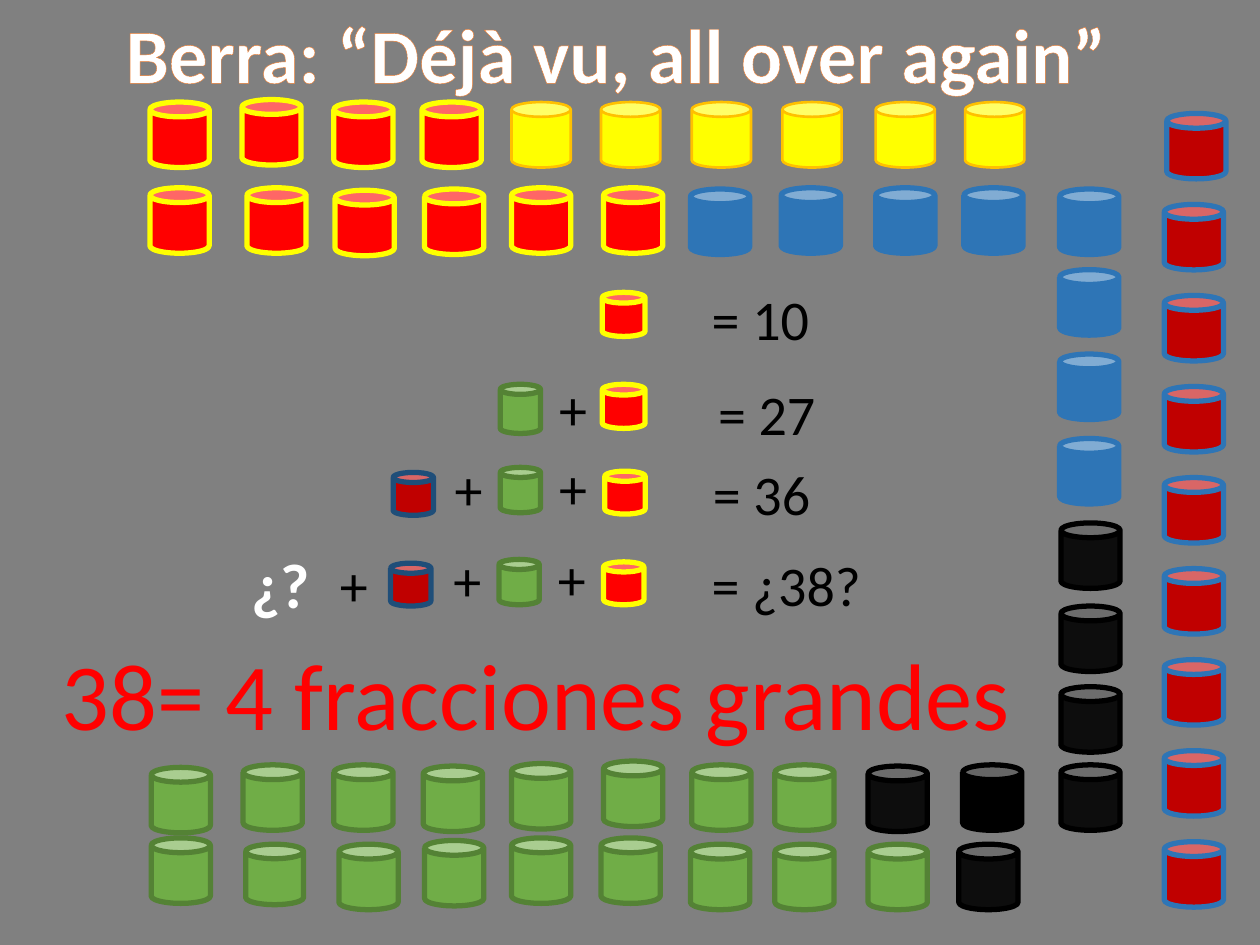
import pptx
import pptx.util
import pptx.dml.color
import pptx.enum.shapes
import pptx.enum.text
import pptx.oxml
import pptx.oxml.ns

Inches = pptx.util.Inches
Pt = pptx.util.Pt
RGB = pptx.dml.color.RGBColor

GRAY = RGB(0x80, 0x80, 0x80)
WHITE = RGB(0xFF, 0xFF, 0xFF)
BLACK = RGB(0, 0, 0)
COAL = RGB(0x0D, 0x0D, 0x0D)
RED = RGB(0xFF, 0, 0)
WINE = RGB(0xC0, 0, 0)
YELLOW = RGB(0xFF, 0xFF, 0)
GOLD = RGB(0xFF, 0xC0, 0)
GREEN = RGB(0x70, 0xAD, 0x47)
MOSS = RGB(0x54, 0x82, 0x35)
BLUE = RGB(0x2E, 0x75, 0xB6)
NAVY = RGB(0x1F, 0x4E, 0x79)

# Can styles: fill, line, line width
LEAF = (GREEN, MOSS, 3)
SUN = (YELLOW, GOLD, 1.5)
SKY = (BLUE, BLUE, 3)
FIRE = (RED, YELLOW, 3)
DARK = (COAL, BLACK, 3)
JET = (BLACK, BLACK, 3)
BRICK = (WINE, BLUE, 3)
PLUM = (WINE, NAVY, 3)

# Big cans: style and left, top of each
CANS = [
    (LEAF, [(1.2, 6.09), (1.93, 6.07), (2.65, 6.07), (3.36, 6.08), (4.06, 6.06),
            (4.79, 6.04), (5.49, 6.07), (6.15, 6.07)]),
    (LEAF, [(1.2, 6.65), (2.69, 6.7), (3.37, 6.67), (4.06, 6.65), (4.77, 6.65),
            (5.48, 6.7), (6.15, 6.7), (6.89, 6.7)]),
    (SUN, [(x, 0.81) for x in (4.06, 4.77, 5.49, 6.21, 6.95, 7.66)]),
    (SKY, [(5.48, 1.5), (6.2, 1.49), (6.95, 1.49), (7.65, 1.49)]),
    (SKY, [(8.41, y) for y in (1.5, 2.14, 2.81, 3.48)]),
    (BRICK, [(9.26, 0.9)] + [(9.24, 0.9 + 0.7225 * i) for i in range(1, 9)]),
    (FIRE, [(1.19, 0.81), (1.92, 0.79), (2.65, 0.81), (3.35, 0.81)]),
    (FIRE, [(1.19, 1.49), (1.96, 1.49), (2.66, 1.51), (3.37, 1.5), (4.06, 1.49),
            (4.79, 1.49)]),
    (DARK, [(8.42, y) for y in (4.15, 4.81, 5.45, 6.07)]),
    (DARK, [(6.89, 6.08), (7.61, 6.7)]),
    (JET, [(7.64, 6.07)]),
]

# Small cans in the sums: style, left, top, width, height
TERMS = [
    (FIRE, 4.78, 2.32, 0.34, 0.35),
    (LEAF, 3.97, 3.05, 0.32, 0.39), (FIRE, 4.78, 3.05, 0.34, 0.35),
    (PLUM, 3.12, 3.75, 0.32, 0.34), (LEAF, 3.97, 3.71, 0.32, 0.36),
    (FIRE, 4.8, 3.74, 0.32, 0.34),
    (PLUM, 3.1, 4.47, 0.32, 0.34), (LEAF, 3.96, 4.44, 0.32, 0.36),
    (FIRE, 4.79, 4.46, 0.32, 0.34),
]

PLUSES = [(4.34, 2.92), (4.34, 3.55), (3.51, 3.56), (4.33, 4.27), (3.5, 4.28),
          (2.6, 4.32)]
SUMS = [("= 10", 5.55, 2.21, 1.88), ("= 27", 5.6, 2.96, 1.62),
        ("= 36", 5.56, 3.6, 1.44), ("= ¿38?", 5.55, 4.32, 1.44)]


def add_can(slide, style, x, y, w=0.47, h=0.52):
    fill, line, width = style
    can = slide.shapes.add_shape(pptx.enum.shapes.MSO_SHAPE.CAN,
                                 Inches(x), Inches(y), Inches(w), Inches(h))
    can.shadow.inherit = False
    can.fill.solid()
    can.fill.fore_color.rgb = fill
    can.line.color.rgb = line
    can.line.width = Pt(width)


def set_text(shape, text, color, size, bold=False, wrap=True):
    frame = shape.text_frame
    frame.text = text
    form = {"word_wrap": wrap,
            "auto_size": pptx.enum.text.MSO_AUTO_SIZE.SHAPE_TO_FIT_TEXT,
            "vertical_anchor": pptx.enum.text.MSO_ANCHOR.TOP}
    for key, value in form.items():
        setattr(frame, key, value)
    font = frame.paragraphs[0].runs[0].font
    for key, value in {"name": "Calibri", "size": Pt(size), "bold": bold}.items():
        setattr(font, key, value)
    font.color.rgb = color


def add_text(slide, text, x, y, w, h=0.64, color=BLACK, size=32, **form):
    box = slide.shapes.add_textbox(Inches(x), Inches(y), Inches(w), Inches(h))
    set_text(box, text, color, size, **form)


def add_title(slide):
    title = slide.shapes.title
    place = {"left": 0.86, "top": 0, "width": 8.07, "height": 0.84}
    for key, value in place.items():
        setattr(title, key, Inches(value))
    set_text(title, "Berra: “Déjà vu, all over again”", WHITE, 44,
             bold=True, wrap=False)
    line = title.text_frame.paragraphs[0]
    line.alignment = pptx.enum.text.PP_ALIGN.CENTER
    # Thin orange outline around the letters
    edge = pptx.oxml.parse_xml(
        f'<a:ln {pptx.oxml.ns.nsdecls("a")} w="{Pt(0.52)}"><a:solidFill>'
        '<a:srgbClr val="ED7D31"/></a:solidFill></a:ln>')
    line.runs[0].font._element.insert(0, edge)


def main():
    deck = pptx.Presentation()
    deck.slide_width, deck.slide_height = Inches(10), Inches(7.5)
    slide = deck.slides.add_slide(deck.slide_layouts[5])
    slide.background.fill.solid()
    slide.background.fill.fore_color.rgb = GRAY

    # Frame of cans
    for style, spots in CANS:
        for x, y in spots:
            add_can(slide, style, x, y)
    add_can(slide, LEAF, 1.95, 6.7, 0.46, 0.48)

    # Sums
    for term in TERMS:
        add_can(slide, *term)
    for x, y in PLUSES:
        add_text(slide, "+", x, y, 0.26)
    for total in SUMS:
        add_text(slide, *total)
    add_text(slide, "¿?", 1.9, 4.28, 0.75, 0.71, WHITE, 36, bold=True)

    # Title and answer
    add_title(slide)
    add_text(slide, "38= 4 fracciones grandes", 0.39, 5, 7.81, 1.01, RED, 54,
             wrap=False)
    deck.save("out.pptx")


if __name__ == "__main__":
    main()
